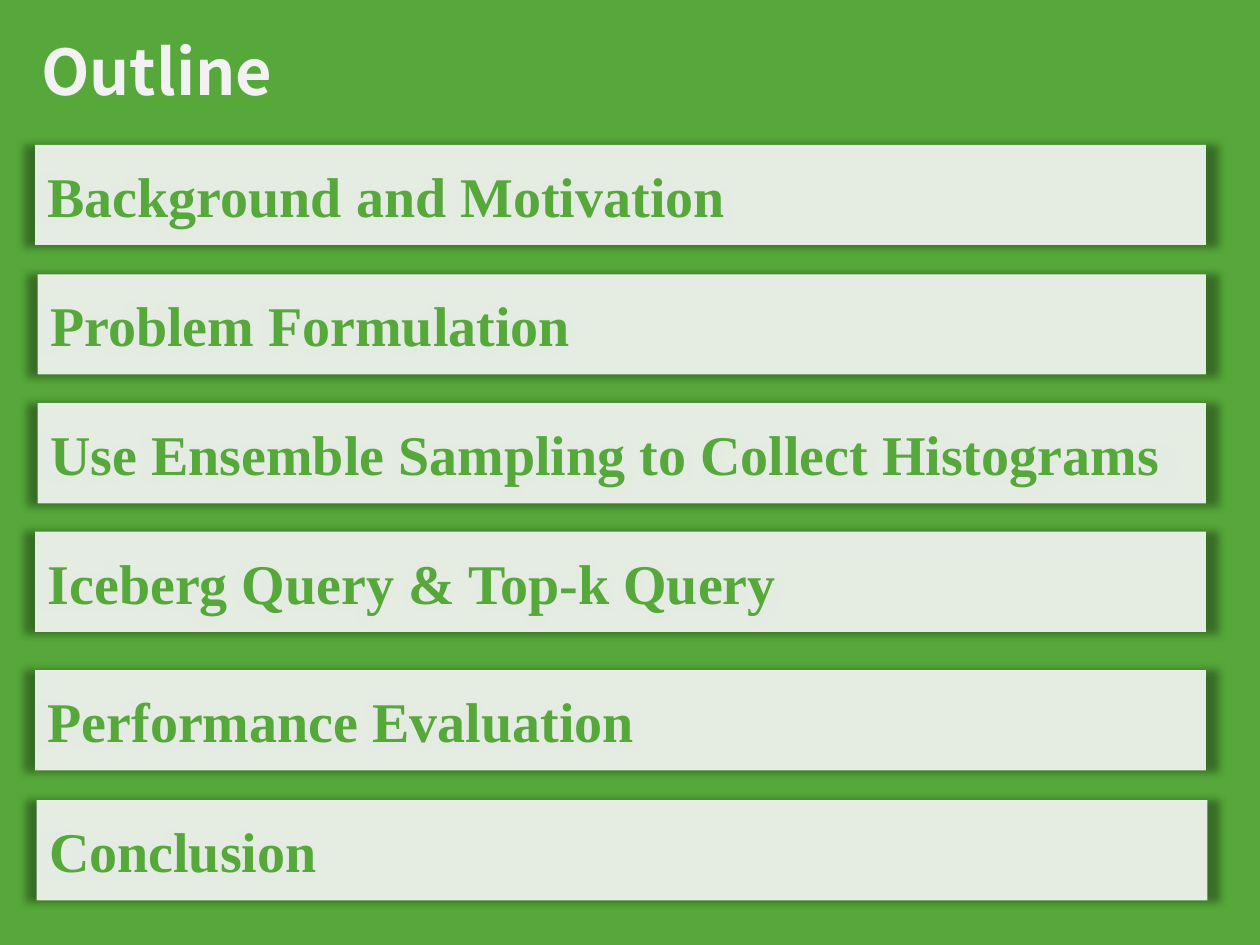
"""Build the outline slide: six translucent bars on a green page."""
from lxml.etree import SubElement
from pptx import Presentation
from pptx.dml.color import RGBColor
from pptx.enum.shapes import MSO_SHAPE as Shape
from pptx.enum.text import MSO_ANCHOR as Anchor, MSO_AUTO_SIZE as AutoSize, PP_ALIGN as Align
from pptx.oxml import parse_xml
from pptx.oxml.ns import nsdecls, qn
from pptx.util import Cm, Pt

GREEN, WHITE, PALE = "55A839", "FFFFFF", "F2F2F2"
BAR_HEIGHT = 2.02
BARS = [
    ("Background and Motivation", 0.71, 2.92, 23.6),
    ("Problem Formulation", 0.76, 5.53, 23.55),
    ("Use Ensemble Sampling to Collect Histograms", 0.76, 8.13, 23.55),
    ("Iceberg Query & Top-k Query", 0.71, 10.72, 23.6),
    ("Performance Evaluation", 0.71, 13.51, 23.6),
    ("Conclusion", 0.74, 16.13, 23.6),
]
BAR_FONT = {"name": "Times New Roman", "size": Pt(32), "bold": True}
TITLE_FONT = {"name": "Noto Sans CJK SC", "size": Pt(36), "bold": True}
SHADOW = (
    f'<a:effectLst {nsdecls("a")}>'
    '<a:outerShdw blurRad="63500" sx="102000" sy="102000" algn="ctr" rotWithShape="0">'
    '<a:srgbClr val="000000"><a:alpha val="40000"/></a:srgbClr>'
    '</a:outerShdw></a:effectLst>'
)


def paint(color_format, color):
    color_format.rgb = RGBColor.from_string(color)


def write(box, text, format_values, color):
    para = box.text_frame.paragraphs[0]
    para.alignment = Align.LEFT
    span = para.add_run()
    span.text = text
    for name, value in format_values.items():
        setattr(span.font, name, value)
    paint(span.font.color, color)


deck = Presentation()
deck.slide_width, deck.slide_height = Cm(25.4), Cm(19.05)
page = deck.slides.add_slide(deck.slide_layouts[6])

backdrop = page.shapes.add_shape(Shape.RECTANGLE, 0, 0, deck.slide_width, deck.slide_height)
backdrop.shadow.inherit = False
backdrop.fill.solid()
paint(backdrop.fill.fore_color, GREEN)
backdrop.line.fill.background()

title = page.shapes.add_textbox(Cm(0.58), Cm(0.53), Cm(5.26), Cm(1.8))
title.text_frame.word_wrap = False
title.text_frame.auto_size = AutoSize.SHAPE_TO_FIT_TEXT
write(title, "Outline", TITLE_FONT, PALE)

for text, left, top, width in BARS:
    bar = page.shapes.add_shape(Shape.RECTANGLE, Cm(left), Cm(top), Cm(width), Cm(BAR_HEIGHT))
    bar.fill.solid()
    paint(bar.fill.fore_color, WHITE)
    properties = bar.element.spPr
    tint = properties.find(qn("a:solidFill")).find(qn("a:srgbClr"))
    SubElement(tint, qn("a:alpha"), val="87000")
    bar.line.fill.background()
    properties.append(parse_xml(SHADOW))
    bar.text_frame.vertical_anchor = Anchor.MIDDLE
    write(bar, text, BAR_FONT, GREEN)

deck.save("out.pptx")
